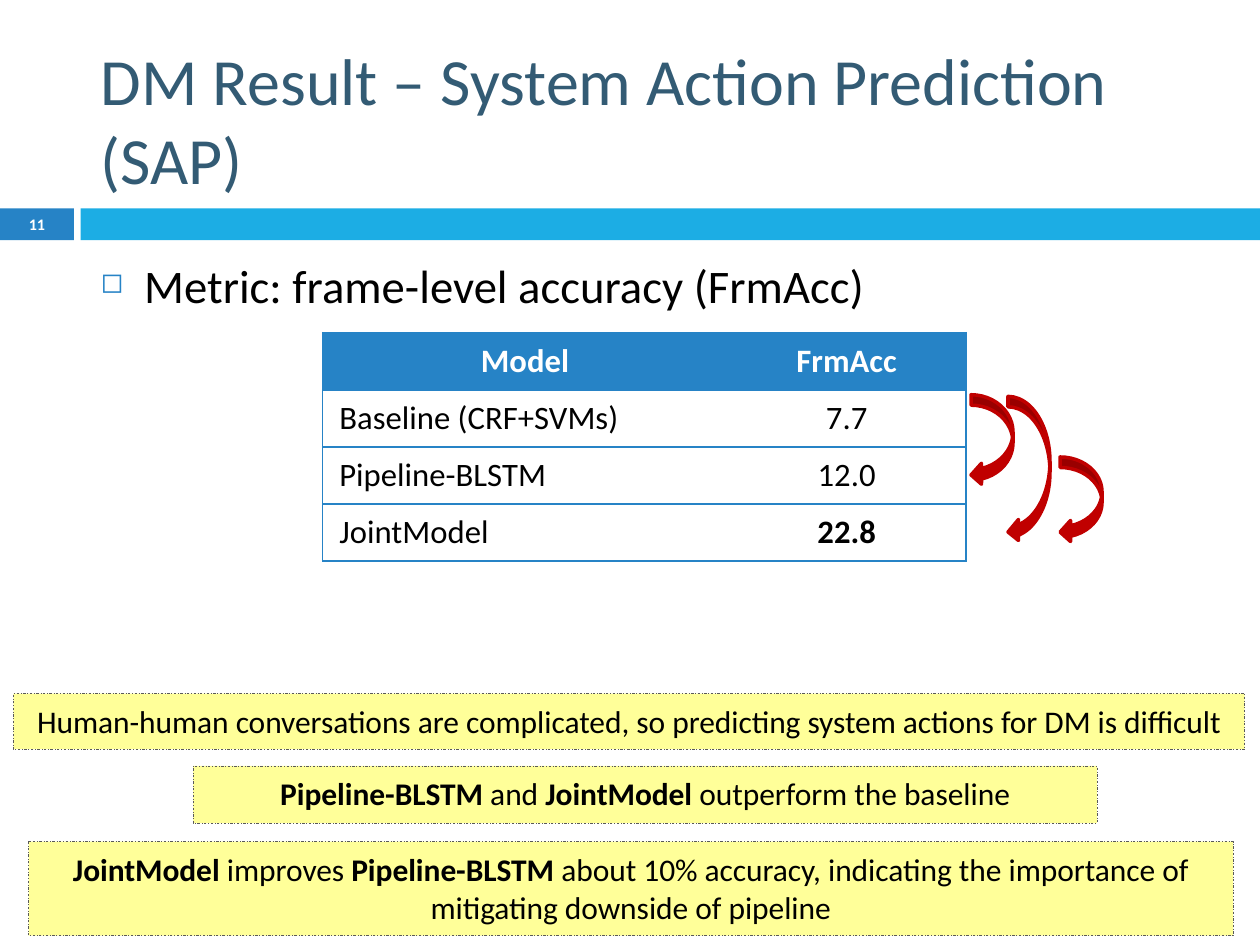
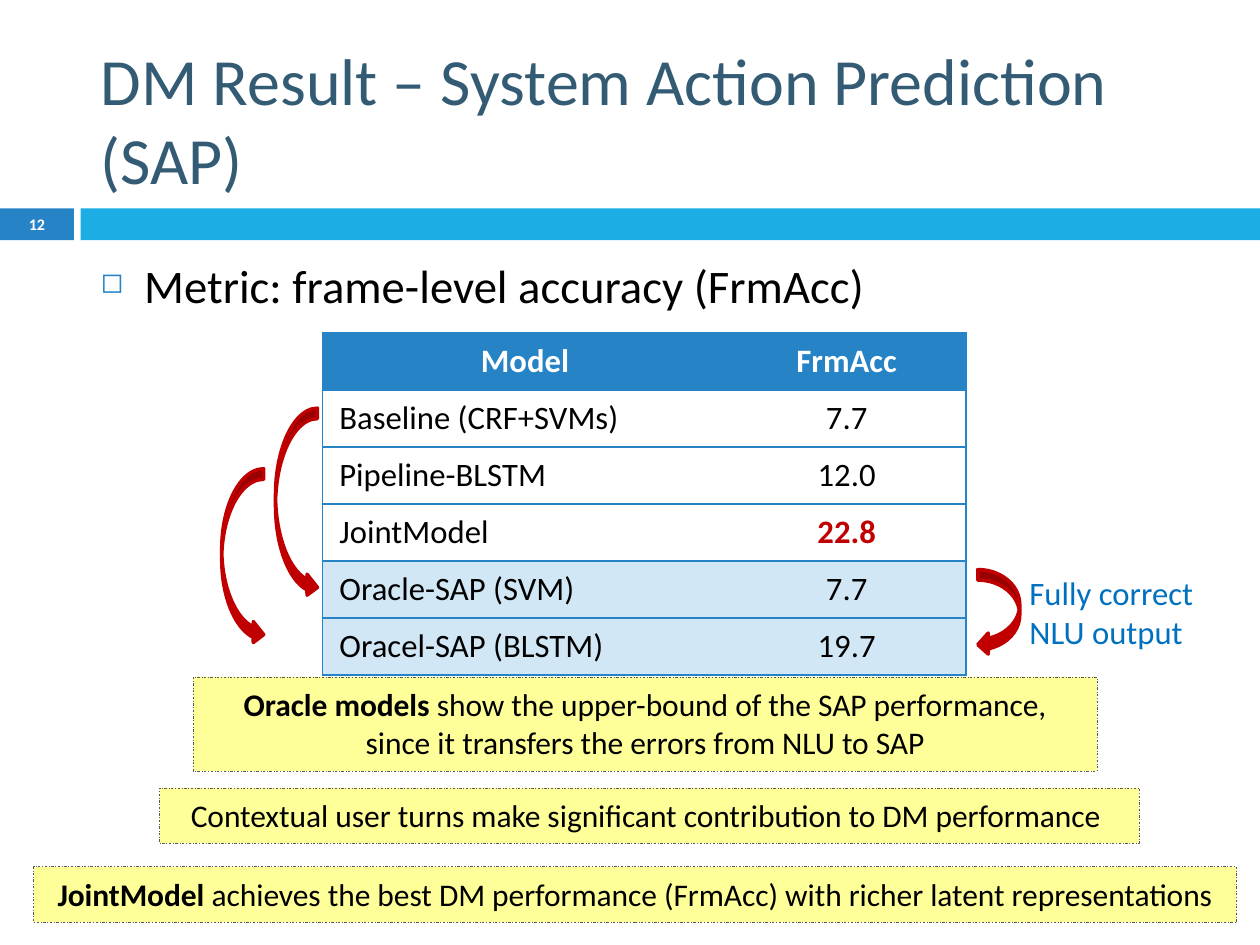
import pptx
import pptx.dml.color
import pptx.enum.dml
import pptx.enum.shapes
import pptx.enum.text
import pptx.oxml
import pptx.oxml.ns
import pptx.util
from pptx.util import Inches

FONT = "Calibri"
COLORS = {
    "title": "335B74",
    "blue": "2683C6",
    "cyan": "1CADE4",
    "white": "FFFFFF",
    "black": "000000",
    "oracle": "D1E7F6",
    "red": "C00000",
    "note": "FFFF99",
    "note_line": "595959",
    "label": "0070C0",
}
TITLE = "DM Result – System Action Prediction (SAP)"
METRIC = "Metric: frame-level accuracy (FrmAcc)"
MODELS = [("Baseline (CRF+SVMs)", "7.7"), ("Pipeline-BLSTM", "12.0"), ("JointModel", "22.8")]
ORACLES = [("Oracle-SAP (SVM)", "7.7"), ("Oracel-SAP (BLSTM)", "19.7")]
BEST_VALUE = "22.8"
COLUMN_WIDTHS = (2.41, 1.42)
ROW_HEIGHT = 0.34
NO_GRID_STYLE = "{2D5ABB26-0587-4C30-8999-92F81FD0307C}"

ALIGN = pptx.enum.text.PP_ALIGN
ANCHOR = pptx.enum.text.MSO_ANCHOR
AUTO_SIZE = pptx.enum.text.MSO_AUTO_SIZE
SHAPE = pptx.enum.shapes.MSO_SHAPE


def rgb(name):
    return pptx.dml.color.RGBColor.from_string(COLORS[name])


def append_xml(parent, tag, content="", **attributes):
    """Append a DrawingML element, given its tag, inner markup and attributes."""
    listed = "".join(f' {key}="{value}"' for key, value in attributes.items())
    parent.append(pptx.oxml.parse_xml(
        f'<a:{tag} {pptx.oxml.ns.nsdecls("a")}{listed}>{content}</a:{tag}>'))


def add_run(paragraph, text, size, color, bold=False):
    run = paragraph.add_run()
    run.text = text
    run.font.name = FONT
    run.font.size = pptx.util.Pt(size)
    run.font.bold = bold
    run.font.color.rgb = rgb(color)


def add_shape(slide, kind, box, fill, line=None, line_width=0.25):
    shape = slide.shapes.add_shape(kind, *map(Inches, box))
    shape.shadow.inherit = False
    shape.fill.solid()
    shape.fill.fore_color.rgb = rgb(fill)
    if line:
        shape.line.color.rgb = rgb(line)
        shape.line.width = pptx.util.Pt(line_width)
    else:
        shape.line.fill.background()
    return shape


def add_text_box(slide, box, text, size, color):
    """Add a wrapping text box and return its paragraph."""
    frame = slide.shapes.add_textbox(*map(Inches, box)).text_frame
    frame.word_wrap = True
    paragraph = frame.paragraphs[0]
    add_run(paragraph, text, size, color)
    return paragraph


def add_title(slide):
    title = slide.shapes.title
    title.left, title.top, title.width, title.height = map(Inches, (0.5, 0.13, 7, 1.1))
    frame = title.text_frame
    frame.auto_size = AUTO_SIZE.NONE
    frame.vertical_anchor = ANCHOR.BOTTOM
    paragraph = frame.paragraphs[0]
    paragraph.alignment = ALIGN.LEFT
    add_run(paragraph, TITLE, 28.35, "title")


def add_bands(slide, number):
    number_band = add_shape(slide, SHAPE.RECTANGLE, (0, 1.24, 0.44, 0.19), "blue")
    add_shape(slide, SHAPE.RECTANGLE, (0.48, 1.24, 7.02, 0.19), "cyan")
    frame = number_band.text_frame
    frame.margin_top = frame.margin_bottom = 0
    frame.vertical_anchor = ANCHOR.MIDDLE
    paragraph = frame.paragraphs[0]
    paragraph.alignment = ALIGN.CENTER
    add_run(paragraph, str(number), 6.9, "white", bold=True)


def add_metric_bullet(slide):
    paragraph = add_text_box(slide, (0.5, 1.48, 6.69, 3.58), METRIC, 20, "black")
    paragraph.space_before = pptx.util.Pt(5.2)
    properties = paragraph._p.get_or_add_pPr()
    properties.set("marL", str(Inches(0.26)))
    properties.set("indent", str(Inches(-0.26)))
    append_xml(properties, "buClr", f'<a:srgbClr val="{COLORS["blue"]}"/>')
    append_xml(properties, "buSzPct", val=60000)
    append_xml(properties, "buChar", char="◻")


def format_cell(cell, text, fill, color, bold, centered, side):
    """Fill a cell; side is the outer edge, lnL or lnR, that gets a border."""
    properties = cell._tc.get_or_add_tcPr()
    for edge in (side, "lnT", "lnB"):
        append_xml(properties, edge,
                   f'<a:solidFill><a:srgbClr val="{COLORS["blue"]}"/></a:solidFill>',
                   w=pptx.util.Pt(0.79))
    cell.fill.solid()
    cell.fill.fore_color.rgb = rgb(fill)
    cell.vertical_anchor = ANCHOR.MIDDLE
    paragraph = cell.text_frame.paragraphs[0]
    paragraph.alignment = ALIGN.CENTER if centered else ALIGN.LEFT
    add_run(paragraph, text, 14, color, bold)


def add_result_table(slide, results, best_color):
    rows = [("Model", "FrmAcc")] + results
    frame = slide.shapes.add_table(
        len(rows), len(COLUMN_WIDTHS), Inches(1.92), Inches(1.98),
        Inches(sum(COLUMN_WIDTHS)), Inches(ROW_HEIGHT * len(rows)))
    table = frame.table
    table._tbl.tblPr.find(pptx.oxml.ns.qn("a:tableStyleId")).text = NO_GRID_STYLE
    for column, width in zip(table.columns, COLUMN_WIDTHS):
        column.width = Inches(width)
    for row_index, row in enumerate(rows):
        header = row_index == 0
        fill = "blue" if header else "oracle" if row in ORACLES else "white"
        for column_index, text in enumerate(row):
            best = text == BEST_VALUE
            color = "white" if header else best_color if best else "black"
            format_cell(table.cell(row_index, column_index), text, fill, color,
                        bold=header or best, centered=header or column_index == 1,
                        side=("lnL", "lnR")[column_index])


def add_curved_arrow(slide, left, top, height, flipped=False):
    arrow = add_shape(slide, SHAPE.CURVED_LEFT_ARROW, (left, top, 0.25, height),
                      "red", "red", 1.5)
    if flipped:
        arrow.element.spPr.get_or_add_xfrm().set("flipH", "1")


def add_note(slide, box, *runs):
    """Add a yellow note; each run is a pair of text and boldness."""
    note = add_shape(slide, SHAPE.RECTANGLE, box, "note", "note_line")
    note.line.dash_style = pptx.enum.dml.MSO_LINE.DASH_DOT
    frame = note.text_frame
    frame.word_wrap = True
    frame.auto_size = AUTO_SIZE.SHAPE_TO_FIT_TEXT
    frame.vertical_anchor = ANCHOR.TOP
    paragraph = frame.paragraphs[0]
    paragraph.alignment = ALIGN.CENTER
    for text, bold in runs:
        add_run(paragraph, text, 13.5, "black", bold)


def add_result_slide(presentation, number, results, best_color):
    slide = presentation.slides.add_slide(presentation.slide_layouts[5])
    add_bands(slide, number)
    add_title(slide)
    add_metric_bullet(slide)
    add_result_table(slide, results, best_color)
    return slide


def add_model_slide(presentation):
    slide = add_result_slide(presentation, 11, MODELS, "black")
    for arrow in ((5.78, 2.35, 0.54), (6, 2.36, 0.87), (6.31, 2.72, 0.51)):
        add_curved_arrow(slide, *arrow)
    add_note(slide, (0.08, 4.13, 7.33, 0.33),
             ("Human-human conversations are complicated, "
              "so predicting system actions for DM is difficult", False))
    add_note(slide, (1.15, 4.56, 5.38, 0.34),
             ("Pipeline-BLSTM", True), (" and ", False),
             ("JointModel", True), (" outperform the baseline", False))
    add_note(slide, (0.17, 5.01, 7.17, 0.56),
             ("JointModel ", True), ("improves ", False), ("Pipeline-BLSTM ", True),
             ("about 10% accuracy, indicating the importance of "
              "mitigating downside of pipeline", False))


def add_oracle_slide(presentation):
    slide = add_result_slide(presentation, 12, MODELS + ORACLES, "red")
    add_curved_arrow(slide, 1.64, 2.43, 1.13, flipped=True)
    add_curved_arrow(slide, 1.32, 2.79, 1.05, flipped=True)
    add_curved_arrow(slide, 5.82, 3.39, 0.51)
    add_note(slide, (1.15, 4.03, 5.38, 0.56),
             ("Oracle models ", True),
             ("show the upper-bound of the SAP performance, "
              "since it transfers the errors from NLU to SAP", False))
    add_note(slide, (0.95, 4.69, 5.83, 0.33),
             ("Contextual user turns make significant contribution to DM performance ", False))
    add_note(slide, (0.2, 5.16, 7.16, 0.33),
             ("JointModel", True),
             (" achieves the best DM performance (FrmAcc) "
              "with richer latent representations", False))
    add_text_box(slide, (6.03, 3.36, 1.33, 0.57), "Fully correct NLU output", 14, "label")


def main():
    presentation = pptx.Presentation()
    presentation.slide_width = Inches(7.5)
    presentation.slide_height = presentation.slide_width * 3 // 4
    add_model_slide(presentation)
    add_oracle_slide(presentation)
    presentation.save("out.pptx")


if __name__ == "__main__":
    main()
